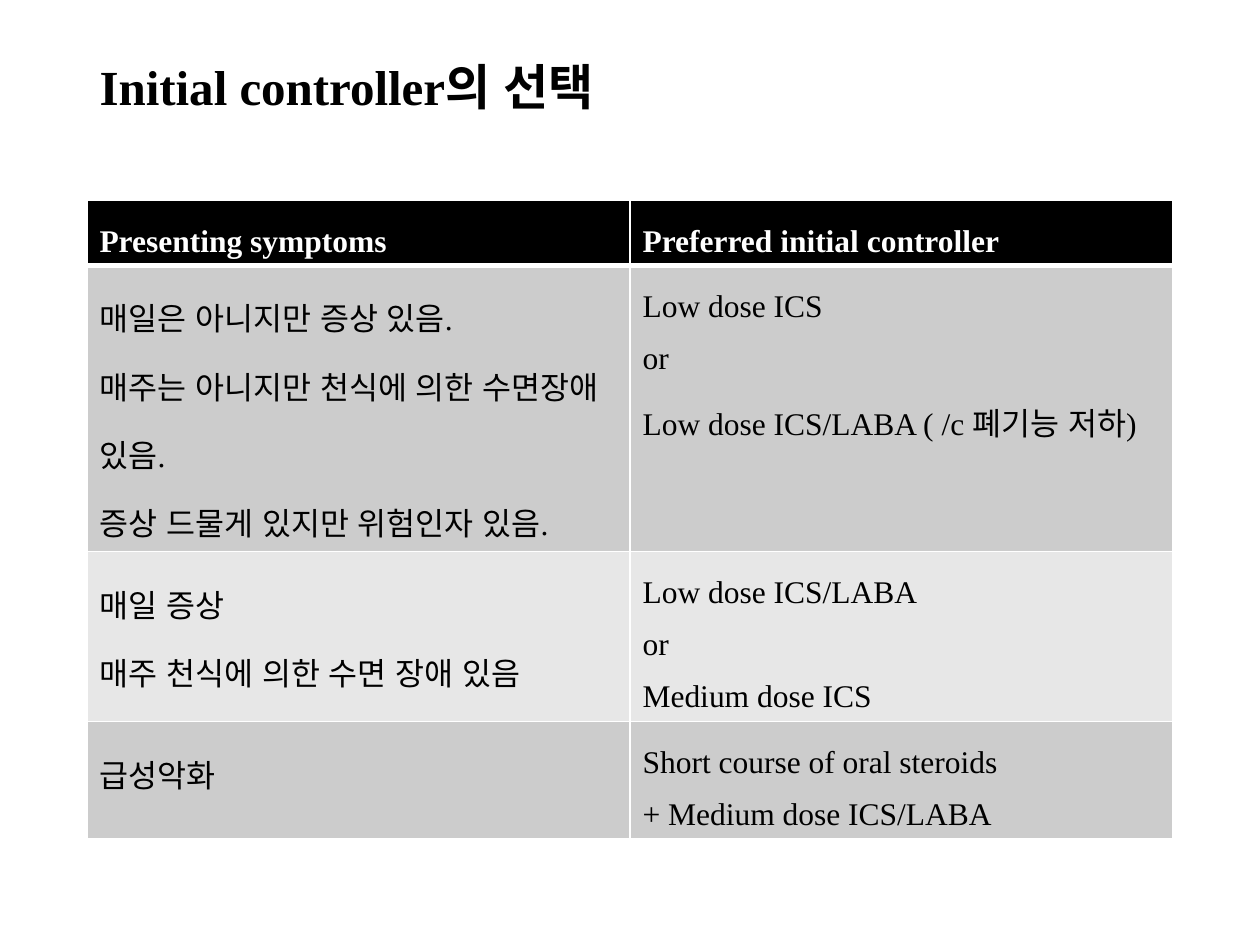
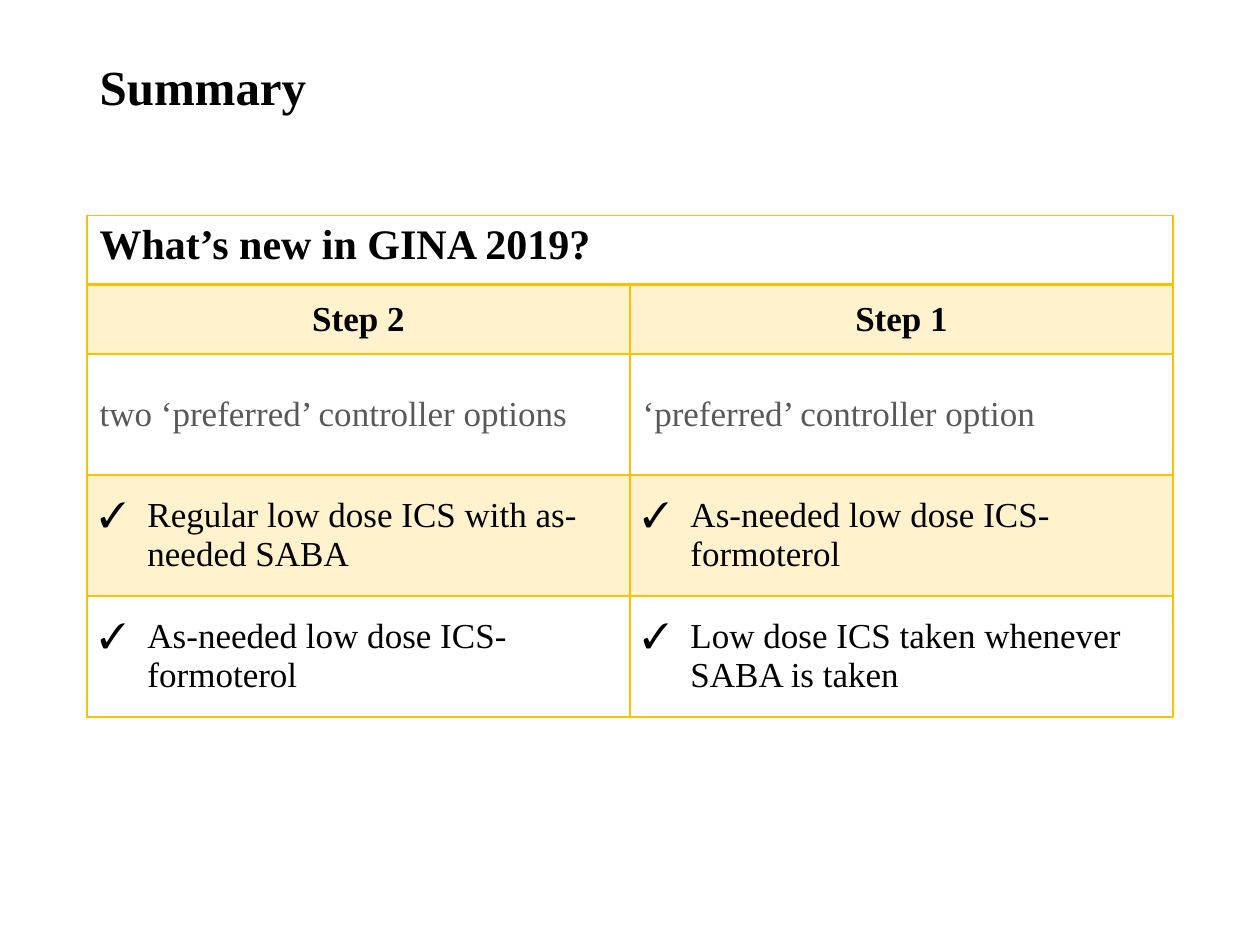
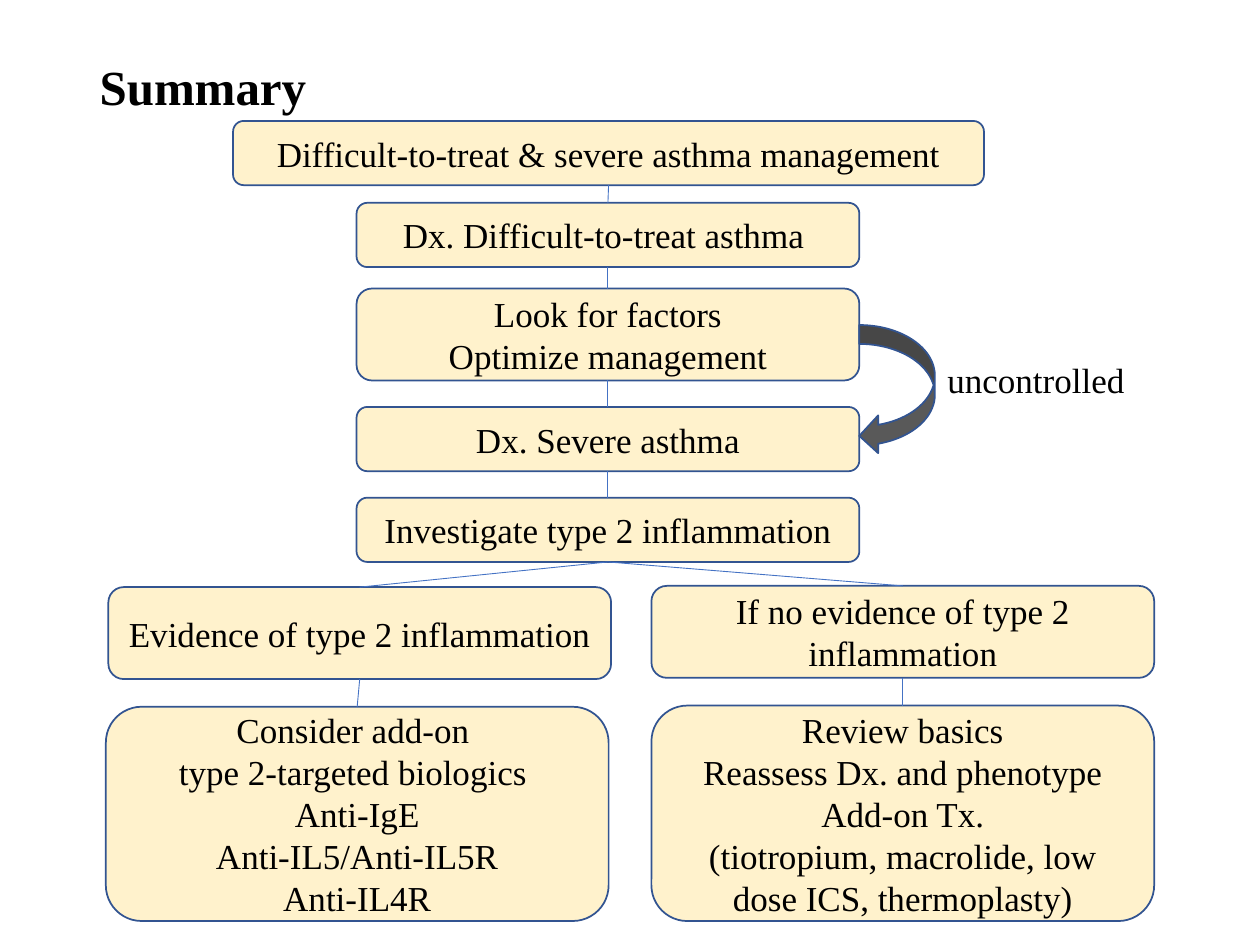
from dataclasses import dataclass

from lxml import etree
from pptx import Presentation
from pptx.dml.color import RGBColor
from pptx.enum.lang import MSO_LANGUAGE_ID
from pptx.enum.shapes import MSO_CONNECTOR, MSO_SHAPE
from pptx.enum.text import MSO_ANCHOR, MSO_AUTO_SIZE, PP_ALIGN
from pptx.oxml.ns import qn
from pptx.util import Inches, Pt

KOREAN = MSO_LANGUAGE_ID.KOREAN
LEFT, CENTER = PP_ALIGN.LEFT, PP_ALIGN.CENTER
TOP, MIDDLE = MSO_ANCHOR.TOP, MSO_ANCHOR.MIDDLE
PROCESS = MSO_SHAPE.FLOWCHART_ALTERNATE_PROCESS
CURVED_ARROW = MSO_SHAPE.CURVED_LEFT_ARROW
STRAIGHT = MSO_CONNECTOR.STRAIGHT
NO_AUTOFIT = MSO_AUTO_SIZE.NONE

FONT = "Times New Roman"
BLACK, WHITE, GRAY = "000000", "FFFFFF", "595959"
BAND_DARK, BAND_LIGHT = "CCCCCC", "E7E7E7"
GOLD, CREAM = "FFC000", "FFF2CC"
OUTLINE, LINK = "325491", "4472C4"
MARGIN, CONTENT_WIDTH = 0.69, 8.62
COLUMNS = 2
TOP_SITE, BOTTOM_SITE = 0, 2


@dataclass(frozen=True)
class TextStyle:
    size: float
    color: str = BLACK
    bold: bool = False
    align: PP_ALIGN = LEFT
    spacing: float | None = None
    bullet: str | None = None


@dataclass(frozen=True)
class TableRow:
    height: float
    cells: tuple[str, ...]
    style: TextStyle
    fill: str | None = None
    alpha: int = 100
    anchor: MSO_ANCHOR = MIDDLE


@dataclass(frozen=True)
class Step:
    left: float
    top: float
    width: float
    height: float
    text: str


TITLE = TextStyle(28, bold=True, spacing=0.9)
SYMPTOM_HEAD = TextStyle(18, WHITE, bold=True, spacing=1.5)
SYMPTOM = TextStyle(18, spacing=1.5)
NEWS_HEAD = TextStyle(24, bold=True)
STEP_HEAD = TextStyle(20, bold=True, align=CENTER)
OPTION_NOTE = TextStyle(20, GRAY)
OPTION = TextStyle(20, bullet="✓")
FLOW = TextStyle(20, align=CENTER)
FLOW_LABEL = TextStyle(20)

CONTROLLER_ROWS = (
    TableRow(0.51, ("Presenting symptoms", "Preferred initial controller"),
             SYMPTOM_HEAD, BLACK, anchor=TOP),
    TableRow(2.26, ("매일은 아니지만 증상 있음.\n매주는 아니지만 천식에 의한 수면장애 있음.\n"
                    "증상 드물게 있지만 위험인자 있음.",
                    "Low dose ICS\nor\nLow dose ICS/LABA ( /c 폐기능 저하)"),
             SYMPTOM, BAND_DARK, anchor=TOP),
    TableRow(1.35, ("매일 증상\n매주 천식에 의한 수면 장애 있음",
                    "Low dose ICS/LABA\nor\nMedium dose ICS"),
             SYMPTOM, BAND_LIGHT, anchor=TOP),
    TableRow(0.92, ("급성악화", "Short course of oral steroids\n+ Medium dose ICS/LABA"),
             SYMPTOM, BAND_DARK, anchor=TOP),
)

GINA_ROWS = (
    TableRow(0.55, ("What’s new in GINA 2019?",), NEWS_HEAD, anchor=TOP),
    TableRow(0.55, ("Step 2", "Step 1"), STEP_HEAD, GOLD, 20),
    TableRow(0.96, ("two ‘preferred’ controller options", "‘preferred’ controller option"),
             OPTION_NOTE),
    TableRow(0.96, ("Regular low dose ICS with as-needed SABA",
                    "As-needed low dose ICS-formoterol"), OPTION, GOLD, 20),
    TableRow(0.96, ("As-needed low dose ICS-formoterol",
                    "Low dose ICS taken whenever SABA is taken"), OPTION),
)

STEP_WIDTH, STEP_LEFT, RIGHT_LEFT = 3.99, 2.83, 5.17
STEPS = {
    "management": Step(1.85, 0.96, 5.96, 0.51, "Difficult-to-treat & severe asthma management"),
    "difficult": Step(STEP_LEFT, 1.61, STEP_WIDTH, 0.51, "Dx. Difficult-to-treat asthma "),
    "factors": Step(STEP_LEFT, 2.29, STEP_WIDTH, 0.73, "Look for factors\nOptimize management"),
    "severe": Step(STEP_LEFT, 3.23, STEP_WIDTH, 0.51, "Dx. Severe asthma"),
    "investigate": Step(STEP_LEFT, 3.95, STEP_WIDTH, 0.51, "Investigate type 2 inflammation"),
    "evidence": Step(0.86, 4.66, STEP_WIDTH, 0.73, "Evidence of type 2 inflammation"),
    "no_evidence": Step(RIGHT_LEFT, 4.65, STEP_WIDTH, 0.73,
                        "If no evidence of type 2 inflammation"),
    "biologics": Step(0.84, 5.61, STEP_WIDTH, 1.7,
                      "Consider add-on \ntype 2-targeted biologics \nAnti-IgE\n"
                      "Anti-IL5/Anti-IL5R\nAnti-IL4R"),
    "review": Step(RIGHT_LEFT, 5.6, STEP_WIDTH, 1.71,
                   "Review basics\nReassess Dx. and phenotype\nAdd-on Tx.\n"
                   "(tiotropium, macrolide, low dose ICS, thermoplasty)"),
}
LINKS = (
    ("management", "difficult"), ("difficult", "factors"), ("factors", "severe"),
    ("severe", "investigate"), ("investigate", "evidence"), ("investigate", "no_evidence"),
    ("evidence", "biologics"), ("no_evidence", "review"),
)


def rgb(color: str) -> RGBColor:
    return RGBColor.from_string(color)


def child(parent, tag: str, **attributes: str):
    return etree.SubElement(parent, qn(tag), attributes)


def write(frame, text: str, style: TextStyle) -> None:
    frame.word_wrap = True
    for index, line in enumerate(text.split("\n")):
        paragraph = frame.paragraphs[0] if index == 0 else frame.add_paragraph()
        paragraph.alignment = style.align
        if style.spacing:
            paragraph.line_spacing = style.spacing
        if style.bullet:
            properties = paragraph._p.get_or_add_pPr()
            properties.set("marL", str(Inches(0.38)))
            properties.set("indent", str(-Inches(0.38)))
            child(properties, "a:buFont", typeface=FONT)
            child(properties, "a:buChar", char=style.bullet)
        run = paragraph.add_run()
        run.text = line
        run.font.name = FONT
        run.font.language_id = KOREAN
        run.font.size = Pt(style.size)
        run.font.bold = style.bold
        run.font.color.rgb = rgb(style.color)


def add_titled_slide(deck, text: str):
    slide = deck.slides.add_slide(deck.slide_layouts[5])
    title = slide.shapes.title
    title.left, title.top = Inches(MARGIN), Inches(0.4)
    title.width, title.height = Inches(CONTENT_WIDTH), Inches(0.62)
    title.text_frame.auto_size = NO_AUTOFIT
    title.text_frame.vertical_anchor = MIDDLE
    write(title.text_frame, text, TITLE)
    return slide


def set_borders(cell, color: str, widths: dict[str, float]) -> None:
    properties = cell._tc.get_or_add_tcPr()
    for side, width in widths.items():
        border = child(properties, f"a:ln{side}", w=str(Pt(width)))
        child(child(border, "a:solidFill"), "a:srgbClr", val=color)


def set_fill(cell, color: str | None, alpha: int) -> None:
    if color is None:
        cell.fill.background()
        return
    cell.fill.solid()
    cell.fill.fore_color.rgb = rgb(color)
    if alpha < 100:
        shade = cell._tc.tcPr.find(qn("a:solidFill")).find(qn("a:srgbClr"))
        child(shade, "a:alpha", val=str(alpha * 1000))


def add_grid(slide, top: float, rows: tuple[TableRow, ...], border: str,
             header_rule: float) -> None:
    height = sum(row.height for row in rows)
    table = slide.shapes.add_table(len(rows), COLUMNS, Inches(MARGIN), Inches(top),
                                   Inches(CONTENT_WIDTH), Inches(height)).table
    table.first_row = table.horz_banding = False
    for column in table.columns:
        column.width = Inches(CONTENT_WIDTH / COLUMNS)
    for index, row in enumerate(rows):
        table.rows[index].height = Inches(row.height)
        widths = {"L": 1, "R": 1, "T": header_rule if index == 1 else 1,
                  "B": header_rule if index == 0 else 1}
        for position in range(COLUMNS):
            cell = table.cell(index, position)
            set_borders(cell, border, widths)
            set_fill(cell, row.fill, row.alpha)
            cell.vertical_anchor = row.anchor
        if len(row.cells) < COLUMNS:
            table.cell(index, 0).merge(table.cell(index, COLUMNS - 1))
        for position, text in enumerate(row.cells):
            write(table.cell(index, position).text_frame, text, row.style)


def add_outlined(slide, kind: MSO_SHAPE, left: float, top: float, width: float,
                 height: float, fill: str):
    shape = slide.shapes.add_shape(kind, Inches(left), Inches(top),
                                   Inches(width), Inches(height))
    shape.shadow.inherit = False
    shape.fill.solid()
    shape.fill.fore_color.rgb = rgb(fill)
    shape.line.color.rgb = rgb(OUTLINE)
    shape.line.width = Pt(1)
    return shape


def add_step(slide, step: Step):
    shape = add_outlined(slide, PROCESS, step.left, step.top, step.width, step.height, CREAM)
    shape.text_frame.vertical_anchor = MIDDLE
    write(shape.text_frame, step.text, FLOW)
    return shape


def add_link(slide, upper, lower) -> None:
    link = slide.shapes.add_connector(STRAIGHT, 0, 0, 0, 0)
    link.begin_connect(upper, BOTTOM_SITE)
    link.end_connect(lower, TOP_SITE)
    link.line.color.rgb = rgb(LINK)
    link.line.width = Pt(0.5)
    child(link._element.spPr, "a:effectLst")


def add_flow(slide) -> None:
    boxes = {key: add_step(slide, step) for key, step in STEPS.items()}
    for upper, lower in LINKS:
        add_link(slide, boxes[upper], boxes[lower])
    add_outlined(slide, CURVED_ARROW, 6.82, 2.58, 0.6, 1.03, GRAY)
    label = slide.shapes.add_textbox(Inches(7.42), Inches(2.8), Inches(1.9), Inches(0.44))
    write(label.text_frame, "uncontrolled", FLOW_LABEL)


def main() -> None:
    deck = Presentation()
    deck.slide_width, deck.slide_height = Inches(10), Inches(7.5)
    add_grid(add_titled_slide(deck, "Initial controller의 선택"), 1.59, CONTROLLER_ROWS, WHITE, 3)
    add_grid(add_titled_slide(deck, "Summary"), 1.71, GINA_ROWS, GOLD, 2)
    add_flow(add_titled_slide(deck, "Summary"))
    deck.save("out.pptx")


if __name__ == "__main__":
    main()
